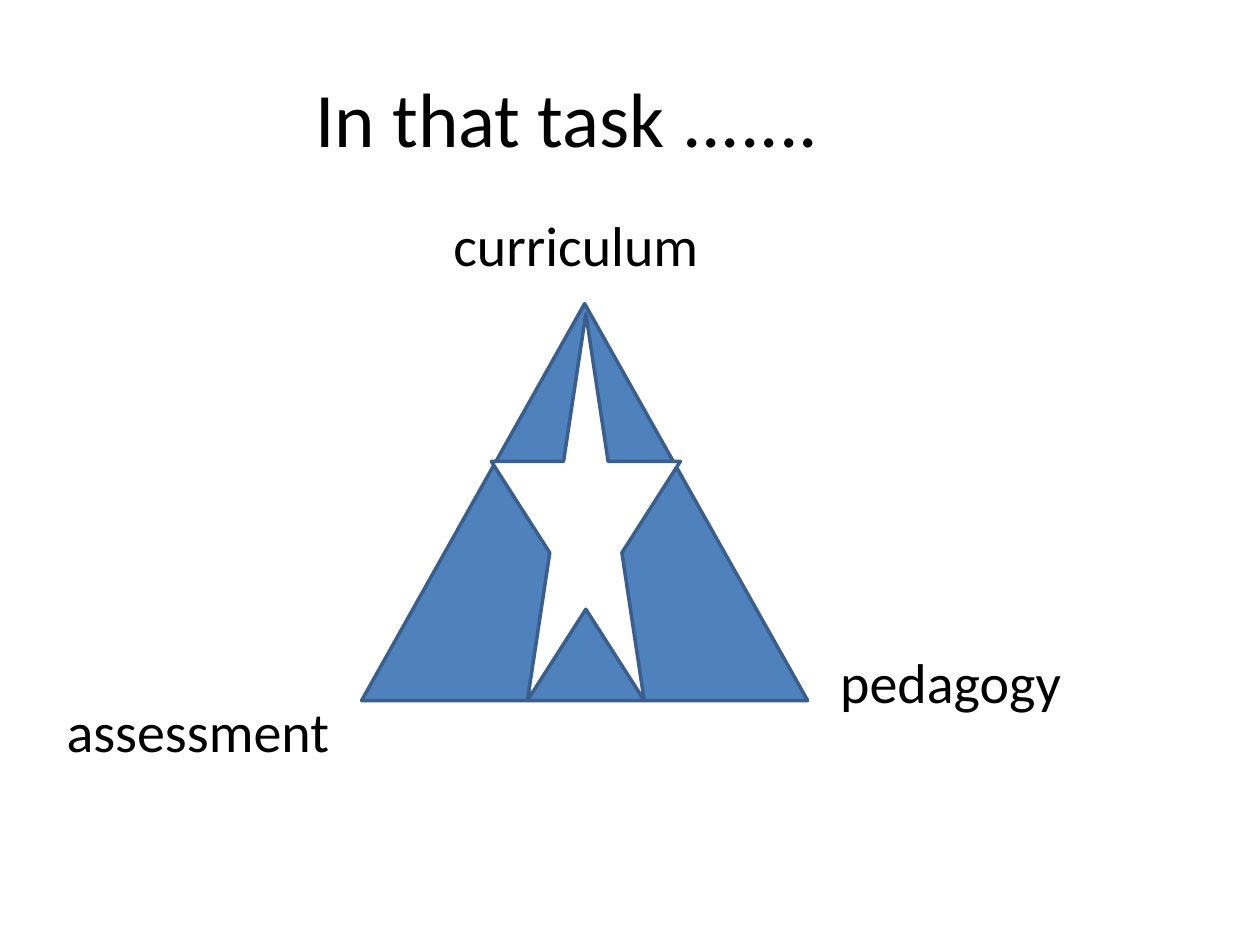
from dataclasses import dataclass

from pptx import Presentation
from pptx.dml.color import RGBColor as RGB
from pptx.enum.shapes import MSO_SHAPE as Shape
from pptx.enum.text import MSO_ANCHOR as Anchor, MSO_AUTO_SIZE as Fit, PP_ALIGN as Align
from pptx.util import Inches, Pt


@dataclass(frozen=True)
class Theme:
    font: str = "Calibri"
    ink: RGB = RGB(0, 0, 0)
    blue: RGB = RGB(0x4F, 0x81, 0xBD)
    edge: RGB = RGB(0x3A, 0x5F, 0x8C)
    white: RGB = RGB(0xFF, 0xFF, 0xFF)
    title: int = 44
    label: int = 32
    stroke: int = 2


class Deck:
    def __init__(self, theme):
        self.theme = theme
        self.prs = Presentation()
        self.prs.slide_width, self.prs.slide_height = Inches(10), Inches(7.5)
        self.slide = self.prs.slides.add_slide(self.prs.slide_layouts[6])

    def text(self, words, box, size, align=Align.LEFT, anchor=Anchor.TOP, wrap=True, fit=Fit.NONE):
        frame = self.slide.shapes.add_textbox(*map(Inches, box)).text_frame
        frame.word_wrap = wrap
        frame.auto_size = fit
        frame.vertical_anchor = anchor
        para = frame.paragraphs[0]
        para.alignment = align
        run = para.add_run()
        run.text = words
        font = run.font
        font.name, font.size = self.theme.font, Pt(size)
        font.color.rgb = self.theme.ink

    def title(self, words, box):
        self.text(words, box, self.theme.title, Align.CENTER, Anchor.MIDDLE)

    def label(self, words, box, wrap=False):
        self.text(words, box, self.theme.label, wrap=wrap, fit=Fit.SHAPE_TO_FIT_TEXT)

    def shape(self, kind, box, fill):
        item = self.slide.shapes.add_shape(kind, *map(Inches, box))
        item.shadow.inherit = False
        item.fill.solid()
        item.fill.fore_color.rgb = fill
        item.line.color.rgb = self.theme.edge
        item.line.width = Pt(self.theme.stroke)


def main():
    theme = Theme()
    deck = Deck(theme)
    deck.title("In that task .......", (0, 0.3, 9, 1.25))
    deck.shape(Shape.ISOSCELES_TRIANGLE, (2.87, 2.41, 3.54, 3.15), theme.blue)
    deck.label("assessment", (0.43, 5.48, 2.44, 0.64), wrap=True)
    deck.label("curriculum", (3.5, 1.62, 2.17, 0.64))
    deck.label("pedagogy", (6.57, 5.09, 1.97, 0.64))
    deck.shape(Shape.STAR_5_POINT, (3.9, 2.49, 1.5, 3.07), theme.white)
    deck.prs.save("out.pptx")


if __name__ == "__main__":
    main()
